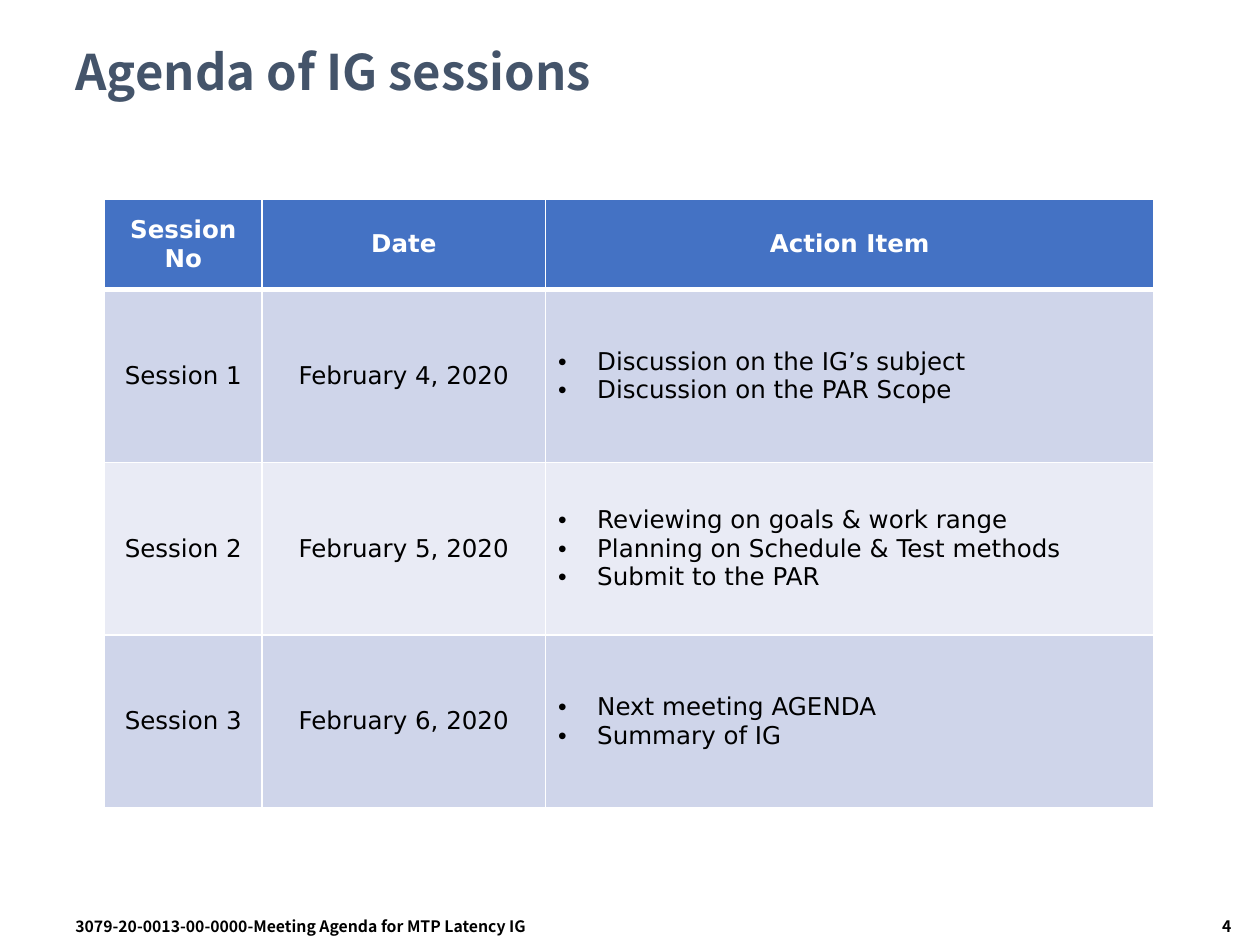
from lxml.etree import SubElement
from pptx import Presentation
from pptx.dml.color import RGBColor
from pptx.enum.text import MSO_ANCHOR, PP_ALIGN
from pptx.oxml.ns import qn
from pptx.util import Inches, Pt

WHITE = RGBColor(0xFF, 0xFF, 0xFF)
BLACK = RGBColor(0x00, 0x00, 0x00)
SLATE = RGBColor(0x44, 0x54, 0x6A)
HEADER_BLUE = RGBColor(0x44, 0x72, 0xC4)
BAND_DARK = RGBColor(0xCF, 0xD5, 0xEA)
BAND_LIGHT = RGBColor(0xE9, 0xEB, 0xF5)

HEADING_FONT = "Noto Sans CJK KR"
TITLE_FORMAT = {"name": HEADING_FONT, "size": Pt(28), "bold": True}
FOOTER_FORMAT = {"name": HEADING_FONT, "size": Pt(9), "bold": True}
HEADER_FORMAT = {"name": "DejaVu Sans", "size": Pt(14), "bold": True}
BODY_FORMAT = HEADER_FORMAT | {"bold": False}

HEADINGS = ["Session No", "Date", "Action Item"]
SESSIONS = [
    ("Session 1", "February 4, 2020",
     ["Discussion on the IG’s subject", "Discussion on the PAR Scope"]),
    ("Session 2", "February 5, 2020",
     ["Reviewing on goals & work range",
      "Planning on Schedule & Test methods",
      "Submit to the PAR"]),
    ("Session 3", "February 6, 2020",
     ["Next meeting AGENDA", "Summary of IG"]),
]
COLUMN_WIDTHS = [1.25, 2.25, 4.83]
HEADER_HEIGHT = 0.72


def format_font(font, settings, color):
    for attribute, value in settings.items():
        setattr(font, attribute, value)
    font.color.rgb = color


def add_bullet(paragraph):
    properties = paragraph._p.get_or_add_pPr()
    properties.set("marL", str(Inches(0.31)))
    properties.set("indent", str(-Inches(0.31)))
    SubElement(properties, qn("a:buFont"), typeface="Arial")
    SubElement(properties, qn("a:buChar"), char="•")


def set_borders(cell, top=1, bottom=1):
    """Draw white cell borders; widths are in points."""
    properties = cell._tc.get_or_add_tcPr()
    for side, width in {"L": 1, "R": 1, "T": top, "B": bottom}.items():
        border = SubElement(properties, qn(f"a:ln{side}"), w=str(Pt(width)))
        fill = SubElement(border, qn("a:solidFill"))
        SubElement(fill, qn("a:srgbClr"), val=str(WHITE))


def fill_cell(cell, content, settings, color, background):
    """Write a centred string, or a list of strings as bullets."""
    cell.fill.solid()
    cell.fill.fore_color.rgb = background
    cell.vertical_anchor = MSO_ANCHOR.MIDDLE
    bulleted = isinstance(content, list)
    cell.text = "\n".join(content) if bulleted else content
    for paragraph in cell.text_frame.paragraphs:
        if bulleted:
            add_bullet(paragraph)
        else:
            paragraph.alignment = PP_ALIGN.CENTER
        format_font(paragraph.font, settings, color)


def place_title(slide, text, left, top, width, height):
    title = slide.shapes.title
    title.left, title.top, title.width, title.height = map(
        Inches, (left, top, width, height))
    title.text = text
    title.text_frame.vertical_anchor = MSO_ANCHOR.MIDDLE
    paragraph = title.text_frame.paragraphs[0]
    paragraph.alignment = PP_ALIGN.LEFT
    paragraph.line_spacing = 0.9
    format_font(paragraph.font, TITLE_FORMAT, SLATE)


def add_agenda(slide, left, top, width, height):
    agenda = slide.shapes.add_table(
        len(SESSIONS) + 1, len(HEADINGS),
        *map(Inches, (left, top, width, height))).table
    for column, share in zip(agenda.columns, COLUMN_WIDTHS):
        column.width = Inches(width * share / sum(COLUMN_WIDTHS))
    session_height = (height - HEADER_HEIGHT) / len(SESSIONS)

    for row_index, contents in enumerate([HEADINGS, *SESSIONS]):
        is_header = row_index == 0
        agenda.rows[row_index].height = Inches(
            HEADER_HEIGHT if is_header else session_height)
        if is_header:
            style = (HEADER_FORMAT, WHITE, HEADER_BLUE)
        else:
            band = BAND_DARK if row_index % 2 else BAND_LIGHT
            style = (BODY_FORMAT, BLACK, band)
        for column_index, content in enumerate(contents):
            cell = agenda.cell(row_index, column_index)
            set_borders(cell, top=3 if row_index == 1 else 1,
                        bottom=3 if is_header else 1)
            fill_cell(cell, content, *style)


def add_footer(slide, text, alignment, left, top, width, height):
    footer = slide.shapes.add_textbox(
        *map(Inches, (left, top, width, height))).text_frame
    footer.word_wrap = True
    footer.text = text
    paragraph = footer.paragraphs[0]
    paragraph.alignment = alignment
    format_font(paragraph.font, FOOTER_FORMAT, BLACK)


def main():
    presentation = Presentation()
    presentation.slide_width = Inches(10)
    presentation.slide_height = Inches(7.5)
    slide = presentation.slides.add_slide(presentation.slide_layouts[5])
    place_title(slide, "Agenda of IG sessions", 0.5, 0.25, 9, 0.68)
    add_agenda(slide, 0.83, 1.58, 8.33, 4.83)
    add_footer(slide, "4", PP_ALIGN.RIGHT, 8.25, 7.23, 1.62, 0.27)
    add_footer(slide, "3079-20-0013-00-0000-Meeting Agenda for MTP Latency IG",
               PP_ALIGN.LEFT, 0.5, 7.23, 4.92, 0.27)
    presentation.save("out.pptx")


if __name__ == "__main__":
    main()
